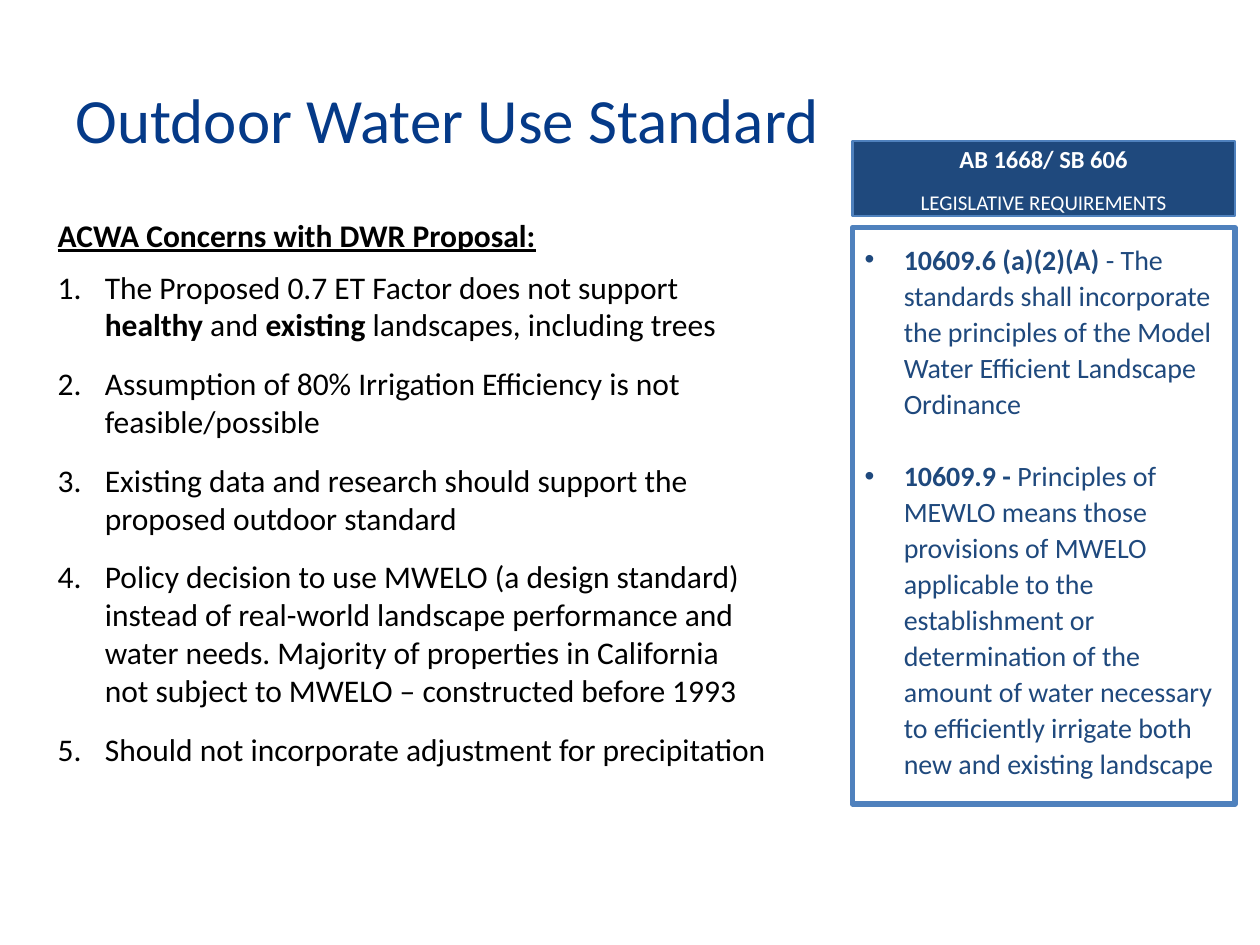
from lxml import etree
from pptx import Presentation
from pptx import util as u
from pptx.dml.color import RGBColor
from pptx.enum import shapes, text
from pptx.oxml import ns

NAVY = RGBColor(0x05, 0x3A, 0x88)
DEEP = RGBColor(0x1F, 0x49, 0x7D)
BLUE = RGBColor(0x4F, 0x81, 0xBD)
BLACK = RGBColor(0, 0, 0)
WHITE = RGBColor(255, 255, 255)
FONT = "Calibri"
LEFT, CENTER = text.PP_ALIGN.LEFT, text.PP_ALIGN.CENTER
TOP, MIDDLE, BOTTOM = (text.MSO_ANCHOR.TOP, text.MSO_ANCHOR.MIDDLE,
                       text.MSO_ANCHOR.BOTTOM)

POINTS = [
    [("The Proposed 0.7 ET Factor does not support ", False), ("healthy", True),
     (" and ", False), ("existing", True),
     (" landscapes, including trees", False)],
    [("Assumption of 80% Irrigation Efficiency is not feasible/possible", False)],
    [("Existing data and research should support the proposed outdoor standard",
      False)],
    [("Policy decision to use MWELO (a design standard) instead of real-world "
      "landscape performance and water needs. Majority of properties in "
      "California not subject to MWELO – constructed before 1993", False)],
    [("Should not incorporate adjustment for precipitation", False)],
]
RULES = [
    [("10609.6 (a)(2)(A)", True),
     (" - The standards shall incorporate the principles of the Model Water "
      "Efficient Landscape Ordinance", False)],
    [("10609.9 - ", True),
     ("Principles of MEWLO means those provisions of MWELO applicable to the "
      "establishment or determination of the amount of water necessary to "
      "efficiently irrigate both new and existing landscape", False)],
]


def apply(obj, form):
    for key, val in form.items():
        setattr(obj, key, val)


def place(shape, box):
    apply(shape, dict(zip(("left", "top", "width", "height"), map(u.Cm, box))))


def mark(para, indent, tag, face, **attrs):
    """Give a paragraph a hanging bullet, or none when indent is 0."""
    props = para._p.get_or_add_pPr()
    props.set("marL", str(u.Cm(indent)))
    props.set("indent", str(-u.Cm(indent)))
    if face:
        etree.SubElement(props, ns.qn("a:buFont"), typeface=face)
    etree.SubElement(props, ns.qn("a:" + tag), **attrs)


def write(para, runs, size, color, form, bullet=None):
    if bullet:
        mark(para, **bullet)
    apply(para, {"space_before": u.Pt(0), "alignment": LEFT, **form})
    for words, bold in runs:
        run = para.add_run()
        run.text = words
        apply(run.font, {"name": FONT, "size": u.Pt(size), "bold": bold})
        run.font.color.rgb = color


def frame(shape, anchor):
    body = shape.text_frame
    apply(body, {"word_wrap": True, "auto_size": text.MSO_AUTO_SIZE.NONE,
                 "vertical_anchor": anchor})
    return body


def panel(slide, box, fill, weight, anchor):
    shape = slide.shapes.add_shape(shapes.MSO_SHAPE.RECTANGLE,
                                   *map(u.Cm, box))
    shape.shadow.inherit = False
    if fill:
        shape.fill.solid()
        shape.fill.fore_color.rgb = fill
    else:
        shape.fill.background()
    shape.line.color.rgb = BLUE
    shape.line.width = u.Pt(weight)
    return frame(shape, anchor)


def title(slide, box):
    shape = slide.shapes.title
    place(shape, box)
    write(frame(shape, BOTTOM).paragraphs[0],
          [("Outdoor Water Use Standard", False)], 36, NAVY,
          {"line_spacing": u.Pt(36)})


def concerns(slide, box):
    shape = slide.placeholders[1]
    place(shape, box)
    body = frame(shape, TOP)
    # Heading
    head = body.paragraphs[0]
    write(head, [("ACWA Concerns with DWR Proposal:", True)], 18, BLACK,
          {"line_spacing": 1.07, "space_after": u.Pt(8)},
          {"indent": 0, "tag": "buNone", "face": None})
    head.runs[0].font.underline = True
    # Numbered list
    for runs in POINTS:
        write(body.add_paragraph(), runs, 18, BLACK, {"space_after": u.Pt(12)},
              {"indent": 0.95, "tag": "buAutoNum", "face": FONT,
               "type": "arabicPeriod"})


def law(slide, box):
    left, top, width, height = box
    cap, gap = 1.52, 0.23
    # Header bar
    body = panel(slide, (left, top, width, cap), DEEP, 1.5, MIDDLE)
    form = {"alignment": CENTER, "line_spacing": 1.07, "space_after": u.Pt(8)}
    write(body.paragraphs[0], [("AB 1668/ SB 606", True)], 14, WHITE, form)
    write(body.add_paragraph(), [("LEGISLATIVE REQUIREMENTS", False)], 12,
          WHITE, form)
    # Quoted sections
    drop = cap + gap
    body = panel(slide, (left, top + drop, width, height - drop), None, 3, TOP)
    apply(body, {"margin_top": u.Cm(0.25), "margin_bottom": 0})
    for i, runs in enumerate(RULES):
        para = body.add_paragraph() if i else body.paragraphs[0]
        write(para, runs, 16, DEEP,
              {"line_spacing": 1.07, "space_after": u.Pt(21)},
              {"indent": 0.79, "tag": "buChar", "face": "Arial", "char": "•"})


def main():
    deck = Presentation()
    apply(deck, {"slide_width": u.Cm(25.4), "slide_height": u.Cm(19.05)})
    slide = deck.slides.add_slide(deck.slide_layouts[1])
    title(slide, (1.27, 0.58, 17.68, 2.7))
    concerns(slide, (0.91, 4.17, 14.86, 12.65))
    law(slide, (17.18, 2.84, 7.72, 13.37))
    deck.save("out.pptx")


if __name__ == "__main__":
    main()
